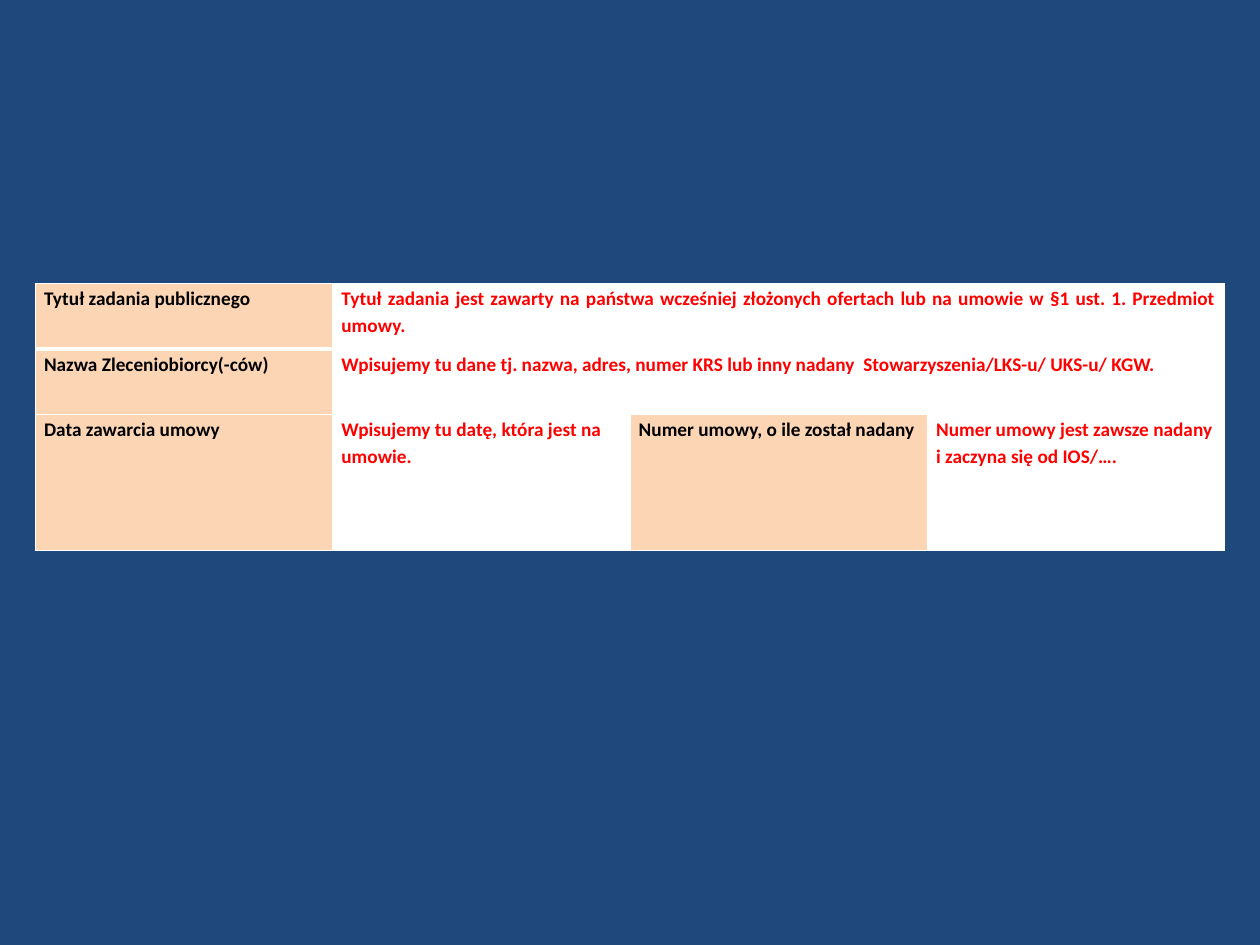
from dataclasses import dataclass

from lxml import etree
from pptx import Presentation
from pptx.dml import color
from pptx.enum import text
from pptx.oxml import ns
from pptx.util import Inches, Pt

NAVY, WHITE, PEACH, BLACK, RED = "1F497D", "FFFFFF", "FCD5B5", "000000", "FF0000"
COLUMN_WIDTH = 2.36
ROW_HEIGHTS = (0.52, 0.52, 1.08)


@dataclass
class Entry:
    row: int
    column: int
    wording: str
    is_label: bool = False
    column_span: int = 1
    justified: bool = False


ENTRIES = [
    Entry(0, 0, "Tytuł zadania publicznego", is_label=True),
    Entry(0, 1, "Tytuł zadania jest zawarty na państwa wcześniej złożonych ofertach "
                "lub na umowie w §1 ust. 1. Przedmiot umowy. ", column_span=3, justified=True),
    Entry(1, 0, "Nazwa Zleceniobiorcy(-ców)", is_label=True),
    Entry(1, 1, "Wpisujemy tu dane tj. nazwa, adres, numer KRS lub inny nadany  "
                "Stowarzyszenia/LKS-u/ UKS-u/ KGW.", column_span=3),
    Entry(2, 0, "Data zawarcia umowy", is_label=True),
    Entry(2, 1, "Wpisujemy tu datę, która jest na umowie."),
    Entry(2, 2, "Numer umowy, o ile został nadany", is_label=True),
    Entry(2, 3, "Numer umowy jest zawsze nadany i zaczyna się od IOS/…."),
]


def paint(fill, hex_color: str) -> None:
    fill.solid()
    fill.fore_color.rgb = color.RGBColor.from_string(hex_color)


def add_borders(cell, bottom_width: float) -> None:
    properties = cell._tc.get_or_add_tcPr()
    for side, width in (("L", 1), ("R", 1), ("T", 1), ("B", bottom_width)):
        line = etree.SubElement(properties, ns.qn(f"a:ln{side}"), w=str(Pt(width)))
        solid = etree.SubElement(line, ns.qn("a:solidFill"))
        etree.SubElement(solid, ns.qn("a:srgbClr"), val=WHITE)


def write_entry(table, entry: Entry) -> None:
    cell = table.cell(entry.row, entry.column)
    if entry.column_span > 1:
        cell.merge(table.cell(entry.row, entry.column + entry.column_span - 1))
    cell.margin_left = cell.margin_right = Inches(0.07)
    cell.margin_top = cell.margin_bottom = 0
    paint(cell.fill, PEACH if entry.is_label else WHITE)

    paragraph = cell.text_frame.paragraphs[0]
    paragraph.text = entry.wording
    paragraph.line_spacing = 1.15
    if entry.justified:
        paragraph.alignment = text.PP_ALIGN.JUSTIFY
    font = paragraph.runs[0].font
    font.name, font.size, font.bold = "Calibri", Pt(11), True
    paint(font.fill, BLACK if entry.is_label else RED)


def main() -> None:
    presentation = Presentation()
    presentation.slide_width, presentation.slide_height = Inches(10), Inches(7.5)
    slide = presentation.slides.add_slide(presentation.slide_layouts[6])
    paint(slide.background.fill, NAVY)

    table = slide.shapes.add_table(
        len(ROW_HEIGHTS), 4, Inches(0.28), Inches(2.25),
        Inches(4 * COLUMN_WIDTH), Inches(sum(ROW_HEIGHTS))).table
    for column in table.columns:
        column.width = Inches(COLUMN_WIDTH)
    for index, (row, height) in enumerate(zip(table.rows, ROW_HEIGHTS)):
        row.height = Inches(height)
        for cell in row.cells:
            add_borders(cell, bottom_width=2 if index == 0 else 1)
    for entry in ENTRIES:
        write_entry(table, entry)

    presentation.save("out.pptx")


if __name__ == "__main__":
    main()
